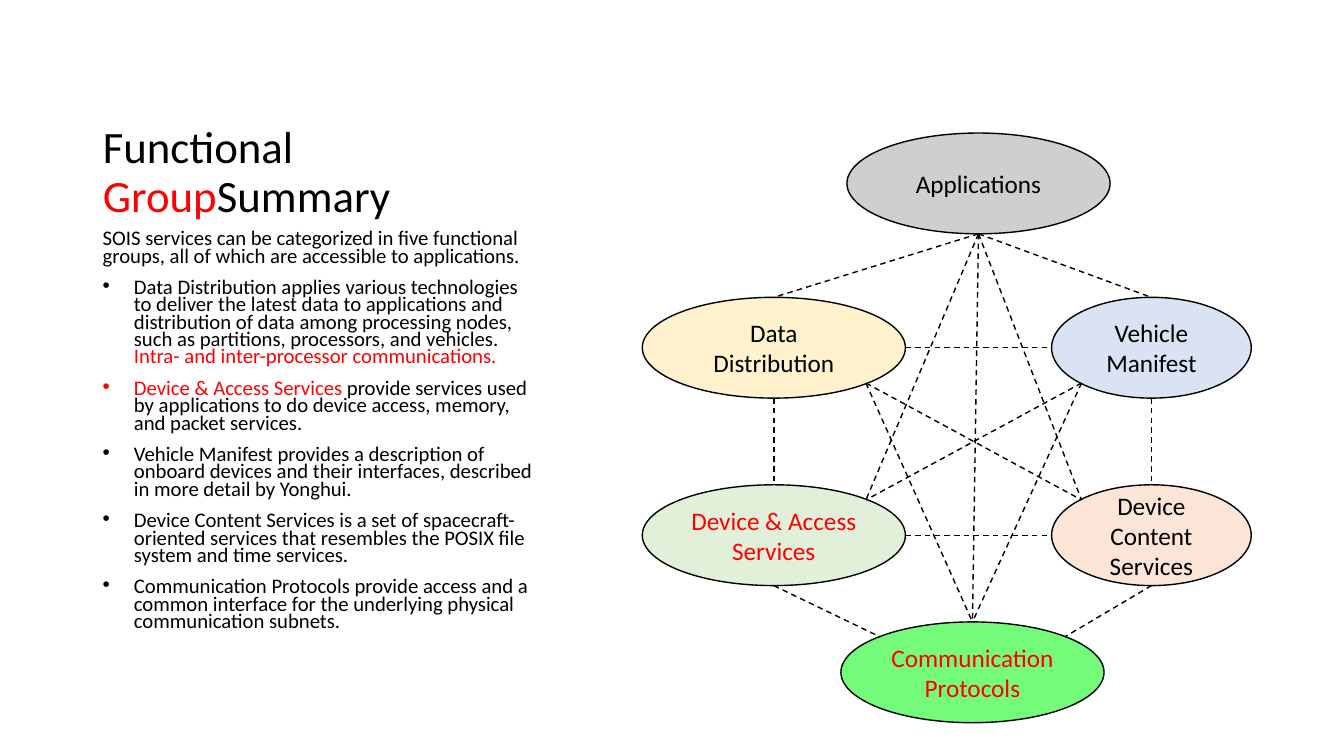
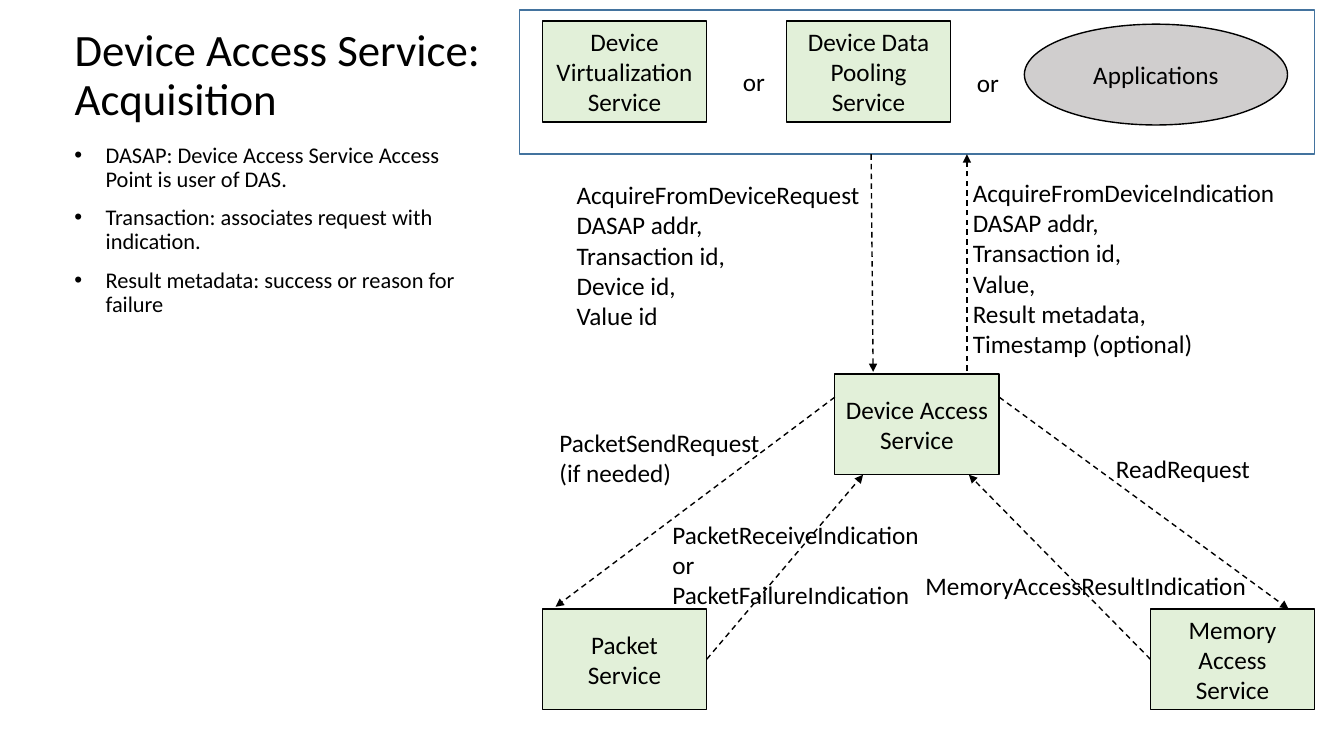
from pptx import Presentation
from pptx.dml.color import RGBColor
from pptx.enum.dml import MSO_LINE
from pptx.enum.shapes import MSO_CONNECTOR, MSO_SHAPE
from pptx.enum.text import MSO_ANCHOR, MSO_AUTO_SIZE, PP_ALIGN
from pptx.oxml.ns import qn
from pptx.util import Inches, Pt
from lxml import etree

# Shared style
FONT = "Calibri"
BLACK = RGBColor(0x00, 0x00, 0x00)
RED = RGBColor(0xFF, 0x00, 0x00)
GRAY = RGBColor(0xD0, 0xCE, 0xCE)
YELLOW = RGBColor(0xFF, 0xF2, 0xCC)
PALE_GREEN = RGBColor(0xE2, 0xF0, 0xD9)
PALE_BLUE = RGBColor(0xDA, 0xE3, 0xF3)
PEACH = RGBColor(0xFB, 0xE5, 0xD6)
BRIGHT_GREEN = RGBColor(0x73, 0xFB, 0x79)
FRAME_BLUE = RGBColor(0x43, 0x73, 0x9E)
TITLE_SIZE, LABEL_SIZE = 32, 18
WIDE, NARROW, BOX_W, NODE_H = 2.61, 1.98, 1.63, 1

# Slide 1 content: text runs are (text, colour)
SUMMARY_TITLE = [("Functional ", BLACK), ("Group", RED), ("Summary", BLACK)]
SUMMARY_INTRO = [("SOIS services can be categorized in five functional groups, "
                  "all of which are accessible to applications.", BLACK)]
SUMMARY_BULLETS = [
    [("Data Distribution applies various technologies to deliver the latest data to "
      "applications and distribution of data among processing nodes, such as "
      "partitions, processors, and vehicles. ", BLACK),
     ("Intra- and inter-processor communications.", RED)],
    [("Device & Access Services ", RED),
     ("provide services used by applications to do device access, memory, "
      "and packet services.", BLACK)],
    [("Vehicle Manifest provides a description of onboard devices and their "
      "interfaces, described in more detail by Yonghui.", BLACK)],
    [("Device Content Services is a set of spacecraft-oriented services that "
      "resembles the POSIX file system and time services.", BLACK)],
    [("Communication Protocols provide access and a common interface for the "
      "underlying physical communication subnets.", BLACK)],
]
# name: (text, left, top, width, fill, text colour)
GROUPS = {
    "apps": ("Applications", 8.4, 1.32, WIDE, GRAY, BLACK),
    "data": ("Data Distribution", 6.37, 2.95, WIDE, YELLOW, BLACK),
    "vehicle": ("Vehicle Manifest", 10.43, 2.95, NARROW, PALE_BLUE, BLACK),
    "access": ("Device & Access Services", 6.37, 4.81, WIDE, PALE_GREEN, RED),
    "content": ("Device Content Services", 10.43, 4.81, NARROW, PEACH, BLACK),
    "protocols": ("Communication\vProtocols", 8.34, 6.17, WIDE, BRIGHT_GREEN, RED),
}
# Points on an ellipse's edge as fractions of its width and height
NEAR, FAR = 0.15, 0.85
SITES = {"n": (0.5, 0), "s": (0.5, 1), "w": (0, 0.5), "e": (1, 0.5),
         "nw": (NEAR, NEAR), "ne": (FAR, NEAR), "sw": (NEAR, FAR), "se": (FAR, FAR)}
GROUP_LINKS = [
    ("apps", "s", "data", "n"), ("apps", "s", "vehicle", "n"),
    ("apps", "s", "access", "ne"), ("apps", "s", "content", "nw"),
    ("apps", "s", "protocols", "n"),
    ("data", "e", "vehicle", "w"), ("data", "s", "access", "n"),
    ("data", "se", "content", "nw"), ("data", "se", "protocols", "n"),
    ("vehicle", "s", "content", "n"), ("vehicle", "sw", "access", "ne"),
    ("vehicle", "sw", "protocols", "n"),
    ("access", "e", "content", "w"), ("access", "s", "protocols", "nw"),
    ("content", "s", "protocols", "ne"),
]

# Slide 2 content
ACQUISITION_TITLE = [("Device Access Service:\vAcquisition", BLACK)]
ACQUISITION_BULLETS = [
    [("DASAP: Device Access Service Access Point is user of DAS.", BLACK)],
    [("Transaction: associates request with indication.", BLACK)],
    [("Result metadata: success or reason for failure", BLACK)],
]
USER_FRAME = (5.15, 0.1, 7.89, 1.43)
SERVICES = [  # text, left, top
    ("Device Virtualization Service", 5.38, 0.21),
    ("Device Data Pooling Service", 7.8, 0.21),
    ("Device Access Service", 8.28, 3.71),
    ("Packet Service", 5.38, 6.04),
    ("Memory Access Service", 11.41, 6.04),
]
MESSAGE_ARROWS = [  # start, end
    ((8.64, 1.53), (8.66, 3.69)),
    ((9.59, 3.68), (9.59, 1.53)),
    ((8.28, 3.94), (5.51, 6.02)),
    ((7.01, 6.54), (8.56, 4.71)),
    ((9.91, 3.94), (12.78, 6.04)),
    ((11.41, 6.54), (9.61, 4.71)),
]
MESSAGES = [  # lines, left, top, width, height
    (["or"], 7.27, 0.61, 0.42, 0.4),
    (["or"], 9.59, 0.62, 0.42, 0.4),
    (["AcquireFromDeviceRequest", "DASAP addr,", "Transaction id,", "Device id,",
      "Value id"], 5.62, 1.73, 3.04, 1.62),
    (["AcquireFromDeviceIndication", "DASAP addr,", "Transaction id,", "Value,",
      "Result metadata,", "Timestamp (optional)"], 9.55, 1.71, 3.23, 1.92),
    (["PacketSendRequest", "(if needed)"], 5.45, 4.19, 2.21, 0.71),
    (["PacketReceiveIndication", "or", "PacketFailureIndication"], 6.57, 5.1, 2.68, 1.01),
    (["ReadRequest"], 10.97, 4.45, 1.55, 0.4),
    (["MemoryAccessResultIndication"], 9.08, 5.61, 3.41, 0.4),
]


def inches(*values):
    return [Inches(v) for v in values]


def style_runs(p, size, color=None):
    for r in p.runs:
        r.font.name, r.font.size = FONT, Pt(size)
        if color is not None:
            r.font.color.rgb = color


def write_runs(p, runs, size, spacing):
    p.text = ""
    p.line_spacing = spacing
    for text, color in runs:
        # A vertical tab marks a line break
        for i, part in enumerate(text.split("\v")):
            if i:
                p.add_line_break()
            r = p.add_run()
            r.text = part
            r.font.color.rgb = color
    style_runs(p, size)


def add_titled_slide(prs, runs, left, top, width, height):
    s = prs.slides.add_slide(prs.slide_layouts[5])
    title = s.shapes.title
    title.left, title.top, title.width, title.height = inches(left, top, width, height)
    tf = title.text_frame
    tf.auto_size = MSO_AUTO_SIZE.NONE
    tf.word_wrap = True
    tf.vertical_anchor = MSO_ANCHOR.BOTTOM
    p = tf.paragraphs[0]
    write_runs(p, runs, TITLE_SIZE, 0.9)
    p.alignment = PP_ALIGN.LEFT
    return s


def add_body(s, box, bullets, size, spacing, intro=None):
    tf = s.shapes.add_textbox(*inches(*box)).text_frame
    tf.word_wrap = True
    items = ([intro] if intro else []) + bullets
    for i, runs in enumerate(items):
        p = tf.add_paragraph() if i else tf.paragraphs[0]
        write_runs(p, runs, size, spacing)
        p.space_before = Pt(10)
        if runs is not intro:
            pPr = p._p.get_or_add_pPr()
            pPr.set("marL", str(Inches(0.31)))
            pPr.set("indent", str(Inches(-0.31)))
            etree.SubElement(pPr, qn("a:buFont")).set("typeface", "Arial")
            etree.SubElement(pPr, qn("a:buChar")).set("char", "•")


def add_node(s, kind, text, left, top, width, fill, color=BLACK):
    sp = s.shapes.add_shape(kind, *inches(left, top, width, NODE_H))
    sp.shadow.inherit = False
    sp.fill.solid()
    sp.fill.fore_color.rgb = fill
    sp.line.color.rgb = BLACK
    sp.line.width = Pt(1)
    tf = sp.text_frame
    tf.word_wrap = True
    tf.vertical_anchor = MSO_ANCHOR.MIDDLE
    p = tf.paragraphs[0]
    p.text = text
    p.alignment = PP_ALIGN.CENTER
    style_runs(p, LABEL_SIZE, color)


def add_dashed_line(s, start, end, arrow=False):
    line = s.shapes.add_connector(MSO_CONNECTOR.STRAIGHT, *inches(*start, *end))
    line.line.color.rgb = BLACK
    line.line.width = Pt(1)
    line.line.dash_style = MSO_LINE.DASH
    if arrow:
        etree.SubElement(line.line._get_or_add_ln(), qn("a:tailEnd")).set("type", "triangle")
    etree.SubElement(line._element.spPr, qn("a:effectLst"))


def add_message(s, lines, *box):
    tf = s.shapes.add_textbox(*inches(*box)).text_frame
    tf.word_wrap = False
    tf.auto_size = MSO_AUTO_SIZE.SHAPE_TO_FIT_TEXT
    tf.text = "\n".join(lines)
    for p in tf.paragraphs:
        style_runs(p, LABEL_SIZE, BLACK)


def group_point(name, site):
    left, top, width = GROUPS[name][1:4]
    fx, fy = SITES[site]
    return left + fx * width, top + fy * NODE_H


def build_summary(prs):
    s = add_titled_slide(prs, SUMMARY_TITLE, 0.92, 0.5, 4.3, 1.75)
    add_body(s, (0.92, 2.25, 4.51, 4.17), SUMMARY_BULLETS, 14.8, 0.7, SUMMARY_INTRO)
    for group in GROUPS.values():
        add_node(s, MSO_SHAPE.OVAL, *group)
    for name_a, site_a, name_b, site_b in GROUP_LINKS:
        add_dashed_line(s, group_point(name_a, site_a), group_point(name_b, site_b))


def build_acquisition(prs):
    s = add_titled_slide(prs, ACQUISITION_TITLE, 0.64, 0.21, 4.3, 1.08)
    add_body(s, (0.64, 1.38, 4.3, 5.42), ACQUISITION_BULLETS, 16, 0.9)
    # Frame around the possible users of the service
    frame = s.shapes.add_shape(MSO_SHAPE.RECTANGLE, *inches(*USER_FRAME))
    frame.shadow.inherit = False
    frame.fill.background()
    frame.line.color.rgb = FRAME_BLUE
    frame.line.width = Pt(1)
    add_node(s, MSO_SHAPE.OVAL, "Applications", 10.16, 0.24, WIDE, GRAY)
    for text, left, top in SERVICES:
        add_node(s, MSO_SHAPE.RECTANGLE, text, left, top, BOX_W, PALE_GREEN)
    for start, end in MESSAGE_ARROWS:
        add_dashed_line(s, start, end, arrow=True)
    for message in MESSAGES:
        add_message(s, *message)


def main():
    prs = Presentation()
    prs.slide_width, prs.slide_height = inches(13.33, 7.5)
    build_summary(prs)
    build_acquisition(prs)
    prs.save("out.pptx")


if __name__ == "__main__":
    main()
